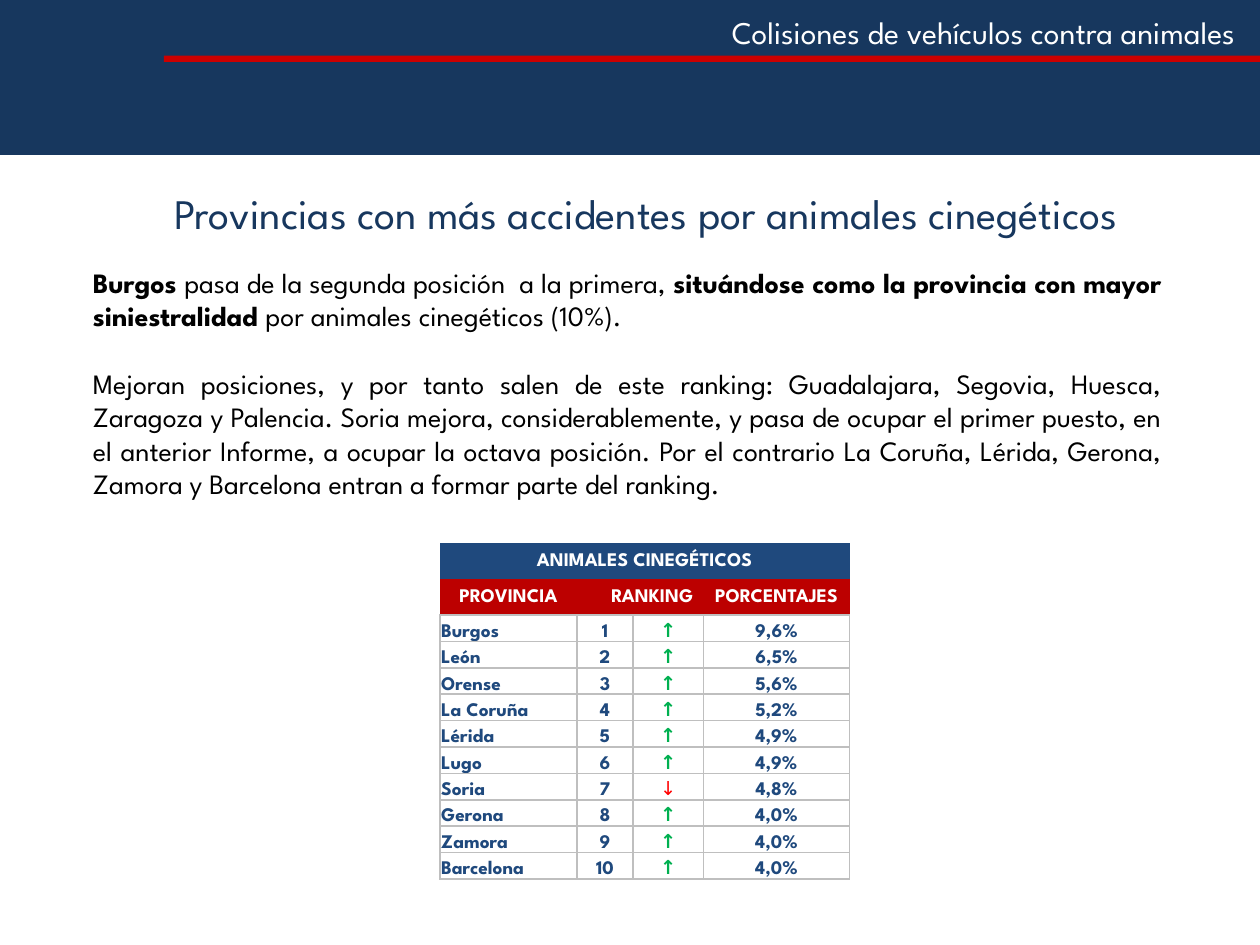
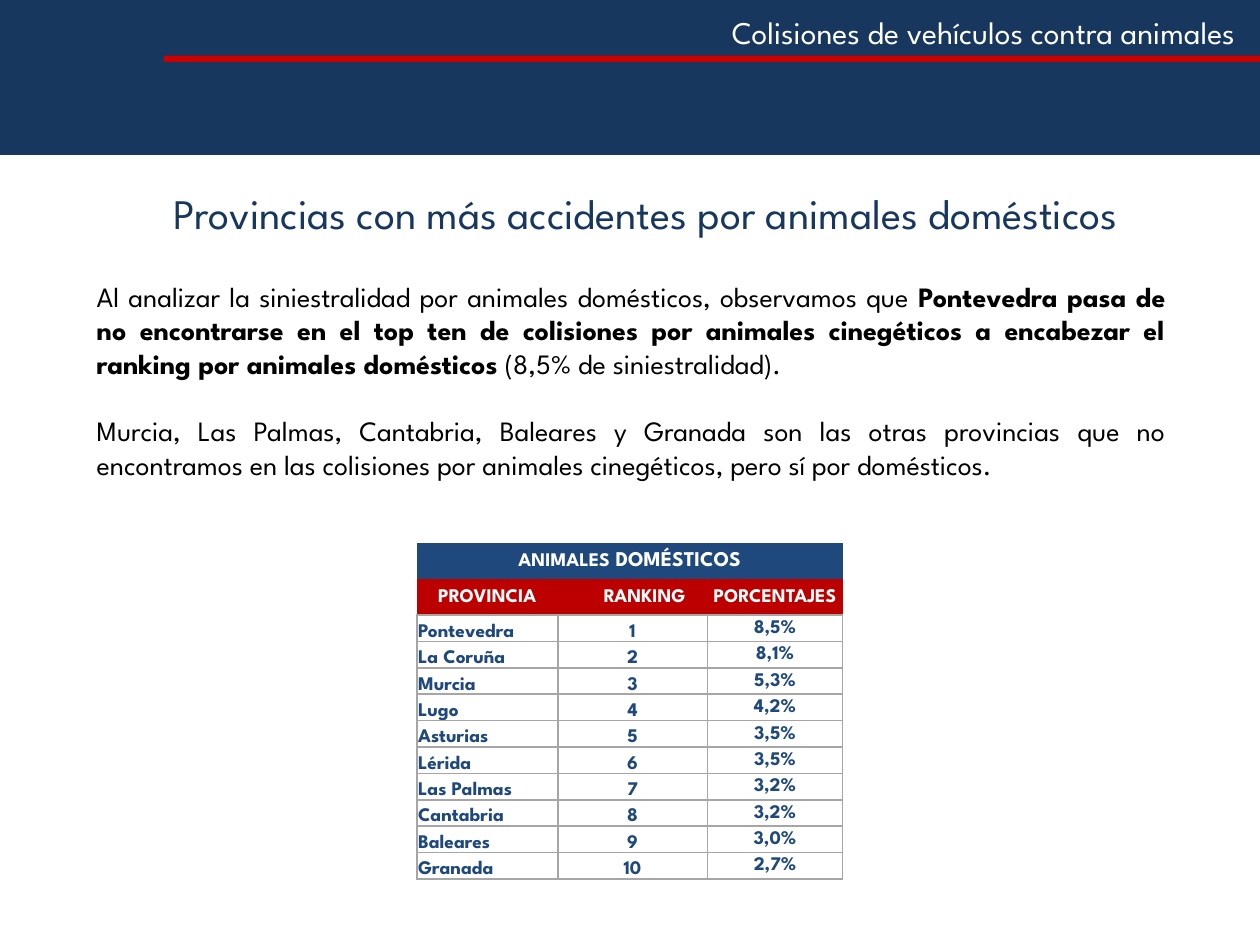
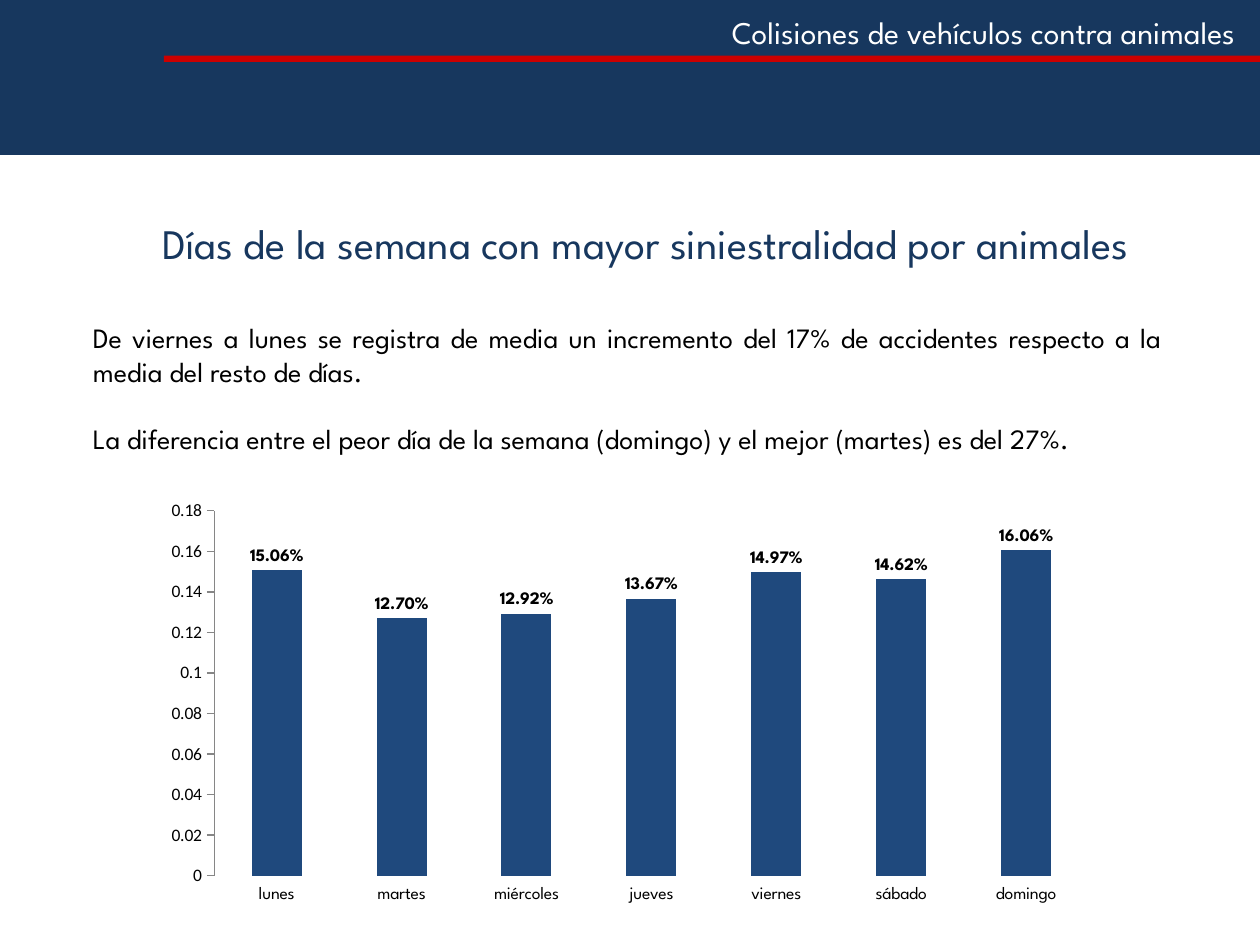
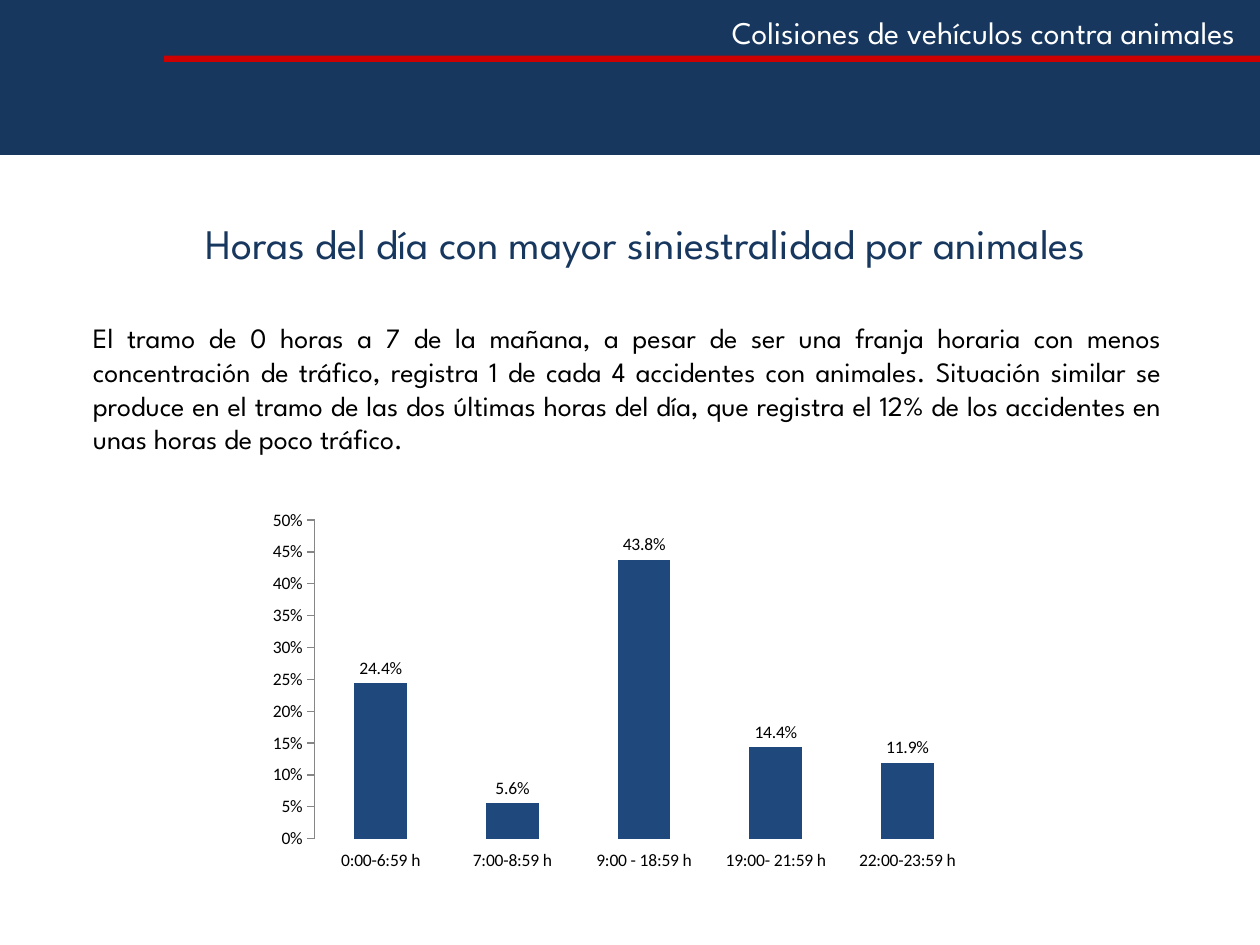
from dataclasses import dataclass

from lxml import etree
from pptx import Presentation
from pptx.chart.data import CategoryChartData
from pptx.dml.color import RGBColor
from pptx.enum.chart import XL_CHART_TYPE, XL_LABEL_POSITION, XL_TICK_MARK
from pptx.enum.shapes import MSO_SHAPE
from pptx.enum.text import MSO_ANCHOR, PP_ALIGN
from pptx.oxml.ns import qn
from pptx.util import Pt

RECTANGLE = MSO_SHAPE.RECTANGLE
TOP, MIDDLE, BOTTOM = MSO_ANCHOR.TOP, MSO_ANCHOR.MIDDLE, MSO_ANCHOR.BOTTOM
LEFT, CENTER, RIGHT = PP_ALIGN.LEFT, PP_ALIGN.CENTER, PP_ALIGN.RIGHT
JUSTIFY = PP_ALIGN.JUSTIFY
COLUMNS = XL_CHART_TYPE.COLUMN_CLUSTERED
OUTSIDE_END = XL_LABEL_POSITION.OUTSIDE_END
TICK_OUT = XL_TICK_MARK.OUTSIDE


@dataclass(frozen=True)
class Theme:
    navy: str = "17375E"
    blue: str = "1F497D"
    red: str = "CC0000"
    dark_red: str = "BC0000"
    green: str = "00B050"
    bright_red: str = "FF0000"
    axis: str = "868686"
    white: str = "FFFFFF"
    black: str = "000000"
    font: str = "League Spartan"
    chart_font: str = "Calibri"
    title: float = 24
    header: float = 18
    body: float = 16
    table: float = 11
    chart: float = 10
    line: float = 19.2  # height of one body line


THEME = Theme()

# Content: each body paragraph is a list of (text, bold)
HEADER = "Colisiones de vehículos contra animales"

TABLE_PAGES = [
    {
        "title": "Provincias con más accidentes por animales cinegéticos",
        "body": [
            [("Burgos ", True),
             ("pasa de la segunda posición  a la primera, ", False),
             ("situándose como la provincia con mayor siniestralidad ", True),
             ("por animales cinegéticos (10%).", False)],
            [("Mejoran posiciones, y por tanto salen de este ranking: Guadalajara, "
              "Segovia, Huesca, Zaragoza y Palencia. Soria mejora, considerablemente, "
              "y pasa de ocupar el primer puesto, en el anterior Informe, a ocupar la "
              "octava posición. Por el contrario La Coruña, Lérida, Gerona, Zamora y "
              "Barcelona entran a formar parte del ranking.", False)],
        ],
        "body_at": (46, 9.4),
        "heading": [("ANIMALES CINEGÉTICOS", 11)],
        "table_at": (251.4, 310.3),
        "widths": [78.3, 32, 40.3, 83.5],
        "border": "BFBFBF",
        "share_anchor": BOTTOM,
        "rows": [
            ("Burgos", "↑", "9,6%"), ("León", "↑", "6,5%"),
            ("Orense", "↑", "5,6%"), ("La Coruña", "↑", "5,2%"),
            ("Lérida", "↑", "4,9%"), ("Lugo", "↑", "4,9%"),
            ("Soria", "↓", "4,8%"), ("Gerona", "↑", "4,0%"),
            ("Zamora", "↑", "4,0%"), ("Barcelona", "↑", "4,0%"),
        ],
    },
    {
        "title": "Provincias con más accidentes por animales domésticos",
        "body": [
            [("Al analizar la siniestralidad por animales domésticos, observamos que ",
              False),
             ("Pontevedra pasa de no encontrarse en el top ten de colisiones por "
              "animales cinegéticos a encabezar el ranking por animales domésticos",
              True),
             (" (8,5% de siniestralidad).", False)],
            [("Murcia, Las Palmas, Cantabria, Baleares y Granada son las otras "
              "provincias que no encontramos en las colisiones por animales "
              "cinegéticos, pero sí por domésticos.", False)],
        ],
        "body_at": (48.2, 7.9),
        "heading": [("ANIMALES", 11), (" DOMÉSTICOS", 12)],
        "table_at": (238.2, 310.3),
        "widths": [80.6, 85.4, 77.4],
        "border": "A6A6A6",
        "share_anchor": MIDDLE,
        "rows": [
            ("Pontevedra", "8,5%"), ("La Coruña", "8,1%"), ("Murcia", "5,3%"),
            ("Lugo", "4,2%"), ("Asturias", "3,5%"), ("Lérida", "3,5%"),
            ("Las Palmas", "3,2%"), ("Cantabria", "3,2%"), ("Baleares", "3,0%"),
            ("Granada", "2,7%"),
        ],
    },
]

CHART_PAGES = [
    {
        "title": "Días de la semana con mayor siniestralidad por animales",
        "body": [
            [("De viernes a lunes se registra de media un incremento del 17% de "
              "accidentes respecto a la media del resto de días.", False)],
            [("La diferencia entre el peor día de la semana (domingo) y el mejor "
              "(martes) es del 27%.", False)],
        ],
        "chart_at": (87.1, 281.5, 545.8, 239.8),
        "values": {"lunes": 0.1506, "martes": 0.127, "miércoles": 0.1292,
                   "jueves": 0.1367, "viernes": 0.1497, "sábado": 0.1462,
                   "domingo": 0.1606},
        "scale": (0.18, 0.02, "General"),
        "label_format": "0.00%",
        "label_bold": True,
        "label_font": THEME.font,
    },
    {
        "title": "Horas del día con mayor siniestralidad por animales",
        "body": [
            [("El tramo de 0 horas a 7 de la mañana, a pesar de ser una franja "
              "horaria con menos concentración de tráfico, registra 1 de cada 4 "
              "accidentes con animales. Situación similar se produce en el tramo de "
              "las dos últimas horas del día, que registra el 12% de los accidentes "
              "en unas horas de poco tráfico.", False)],
        ],
        "chart_at": (147.6, 287.3, 416.9, 214.6),
        "values": {"0:00-6:59 h": 0.244, "7:00-8:59 h": 0.056,
                   "9:00 - 18:59 h": 0.438, "19:00- 21:59 h": 0.144,
                   "22:00-23:59 h": 0.119},
        "scale": (0.5, 0.05, "0%"),
        "label_format": "0.0%",
        "label_bold": False,
        "label_font": THEME.chart_font,
    },
]


# Text helpers
def rgb(value):
    return RGBColor.from_string(value)


def points(*lengths):
    return [Pt(length) for length in lengths]


def style_font(font, size, color, bold=False, name=THEME.font):
    font.size, font.bold, font.name = Pt(size), bold, name
    font.color.rgb = rgb(color)


def add_span(para, text, size, color, bold=False):
    span = para.add_run()
    span.text = text
    style_font(span.font, size, color, bold)


# Shared parts
def add_bar(page, at, color):
    bar = page.shapes.add_shape(RECTANGLE, *points(*at))
    bar.shadow.inherit = False
    bar.fill.solid()
    bar.fill.fore_color.rgb = rgb(color)
    bar.line.fill.background()
    return bar


def move_header_to_layout(page):
    """Draw the header once and hand it to the layout, behind its placeholders."""
    band = add_bar(page, (0, 0, 720, 88.6), THEME.navy)
    label = page.shapes.add_textbox(*points(350, 3.6, 363, 29))
    label.text_frame.word_wrap = False
    para = label.text_frame.paragraphs[0]
    para.alignment = RIGHT
    add_span(para, HEADER, THEME.header, THEME.white)
    rule = add_bar(page, (93.6, 31.8, 626.4, 3.6), THEME.red)
    tree = page.slide_layout.shapes.element
    for index, part in enumerate((band, label, rule), start=2):
        tree.insert(index, part.element)


def add_title(page, text, top):
    title = page.shapes.title
    title.left, title.top, title.width, title.height = points(20.2, top, 697.7, 115.9)
    frame = title.text_frame
    frame.vertical_anchor = MIDDLE
    para = frame.paragraphs[0]
    para.alignment = CENTER
    add_span(para, text, THEME.title, THEME.navy)


def add_body(page, paragraphs, left, top, lines_above=0):
    box = page.shapes.add_textbox(*points(left, top, 625, 380.2))
    frame = box.text_frame
    frame.word_wrap = True
    frame.vertical_anchor = MIDDLE
    frame.margin_top = Pt(3.6 + lines_above * THEME.line)
    for index, spans in enumerate(paragraphs):
        para = frame.add_paragraph() if index else frame.paragraphs[0]
        para.alignment = JUSTIFY
        if index:
            para.space_before = Pt(THEME.line)
        for text, bold in spans:
            add_span(para, text, THEME.body, THEME.black, bold)


# Ranking table
def set_borders(cell, color, sides):
    properties = cell._tc.get_or_add_tcPr()
    for index, side in enumerate("LRTB"):
        line = etree.Element(qn("a:ln" + side), w=str(Pt(1)))
        if side in sides:
            fill = etree.SubElement(line, qn("a:solidFill"))
            etree.SubElement(fill, qn("a:srgbClr"), val=color)
        else:
            etree.SubElement(line, qn("a:noFill"))
        properties.insert(index, line)


def fill_cell(cell, spans, color, align=CENTER, anchor=MIDDLE, bold=True, indent=0):
    cell.vertical_anchor = anchor
    cell.margin_left = Pt(0.7 + indent)
    para = cell.text_frame.paragraphs[0]
    para.alignment = align
    for text, size in spans:
        add_span(para, text, size, color, bold)


def add_ranking(page, content):
    widths, rows = content["widths"], content["rows"]
    heights = [20.6] * 2 + [15.1] * len(rows)
    left, top = content["table_at"]
    table = page.shapes.add_table(
        len(heights), len(widths), *points(left, top, sum(widths), sum(heights))).table
    table.first_row = table.horz_banding = False
    for column, width in zip(table.columns, widths):
        column.width = Pt(width)

    # Fills, borders and insets
    looks = [(THEME.blue, ""), (THEME.dark_red, "B")] + [(THEME.white, "LRTB")] * len(rows)
    for row, height, (fill, sides) in zip(table.rows, heights, looks):
        row.height = Pt(height)
        for cell in row.cells:
            cell.fill.solid()
            cell.fill.fore_color.rgb = rgb(fill)
            set_borders(cell, content["border"], sides)
            cell.margin_left = cell.margin_right = cell.margin_top = Pt(0.7)
            cell.margin_bottom = 0

    # Two header rows
    last = len(widths) - 1
    table.cell(0, 0).merge(table.cell(0, last))
    if last > 2:
        table.cell(1, 1).merge(table.cell(1, last - 1))
    fill_cell(table.cell(0, 0), content["heading"], THEME.white)
    for column, text, indent in ((0, "PROVINCIA", 0), (1, "RANKING", 14),
                                 (last, "PORCENTAJES", 0)):
        fill_cell(table.cell(1, column), [(text, THEME.table)], THEME.white,
                  indent=indent)

    # Provinces in order, with their trend where there is one
    arrow_colors = {"↑": THEME.green, "↓": THEME.bright_red}
    for rank, (province, *rest) in enumerate(rows, start=1):
        for column, text in enumerate((province, str(rank), *rest)):
            fill_cell(table.cell(rank + 1, column), [(text, THEME.table)],
                      arrow_colors.get(text, THEME.blue),
                      align=CENTER if column else LEFT,
                      anchor=content["share_anchor"] if column == last else BOTTOM,
                      bold=text != "↓")


# Column chart
def add_columns(page, content):
    data = CategoryChartData()
    data.categories = list(content["values"])
    data.add_series("Series 1", list(content["values"].values()))
    chart = page.shapes.add_chart(COLUMNS, *points(*content["chart_at"]), data).chart
    chart.has_title = chart.has_legend = False
    style_font(chart.font, THEME.chart, THEME.black, name=THEME.chart_font)

    plot = chart.plots[0]
    plot.gap_width = 150
    plot.vary_by_categories = False
    series = plot.series[0]
    series.format.fill.solid()
    series.format.fill.fore_color.rgb = rgb(THEME.blue)
    labels = series.data_labels
    labels.show_value = True
    labels.position = OUTSIDE_END
    labels.number_format = content["label_format"]
    labels.number_format_is_linked = False
    style_font(labels.font, THEME.chart, THEME.black, content["label_bold"],
               content["label_font"])

    categories, values = chart.category_axis, chart.value_axis
    categories.major_tick_mark = values.major_tick_mark = TICK_OUT
    categories.format.line.fill.background()
    style_font(categories.tick_labels.font, THEME.chart, THEME.black,
               name=content["label_font"])
    values.has_major_gridlines = False
    values.format.line.color.rgb = rgb(THEME.axis)
    values.minimum_scale = 0
    values.maximum_scale, values.major_unit, number_format = content["scale"]
    values.tick_labels.number_format = number_format
    values.tick_labels.number_format_is_linked = False


def main():
    deck = Presentation()
    deck.slide_width, deck.slide_height = points(720, 540)
    title_only = deck.slide_layouts.get_by_name("Title Only")

    for content in TABLE_PAGES:
        page = deck.slides.add_slide(title_only)
        add_title(page, content["title"], 63.4)
        add_body(page, content["body"], *content["body_at"], lines_above=2)
        add_ranking(page, content)

    for content in CHART_PAGES:
        page = deck.slides.add_slide(title_only)
        add_title(page, content["title"], 80.6)
        add_body(page, content["body"], 46, 31.7)
        add_columns(page, content)

    move_header_to_layout(deck.slides[0])
    deck.save("out.pptx")


if __name__ == "__main__":
    main()
